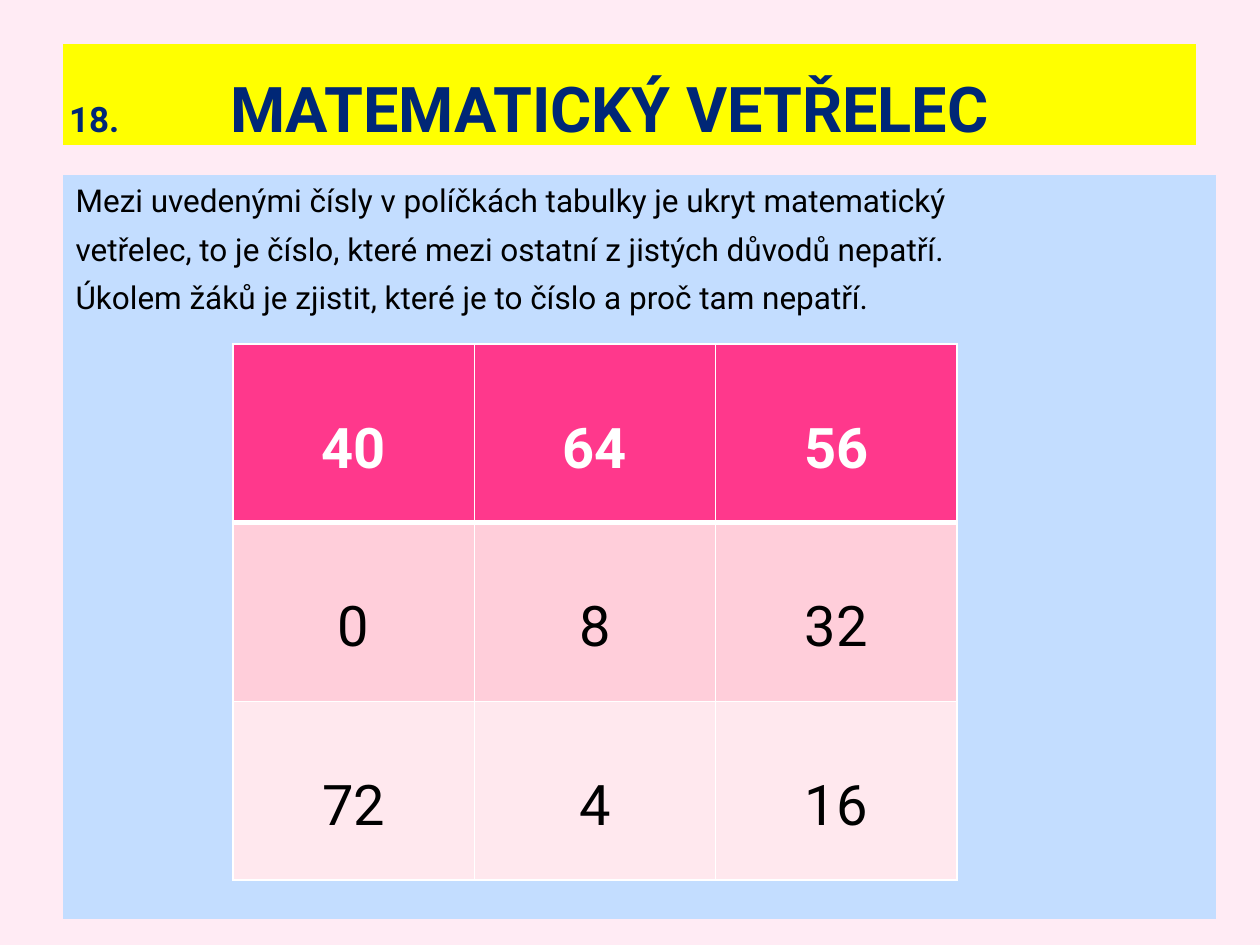
"""Build the slide with the odd-number-out puzzle."""
from dataclasses import dataclass

from lxml.etree import SubElement
from pptx import Presentation
from pptx.dml.color import RGBColor
from pptx.enum.text import MSO_ANCHOR, MSO_AUTO_SIZE, PP_ALIGN
from pptx.oxml.ns import qn
from pptx.util import Emu, Pt

BOTTOM, TOP = MSO_ANCHOR.BOTTOM, MSO_ANCHOR.TOP
LEFT, CENTER = PP_ALIGN.LEFT, PP_ALIGN.CENTER
NO_AUTOFIT = MSO_AUTO_SIZE.NONE
EMU_PER_PX = 914400 / 126


@dataclass(frozen=True)
class Theme:
    font: str = "Roboto"
    background: str = "FFEBF4"
    title_fill: str = "FFFF00"
    title_text: str = "002776"
    body_fill: str = "C3DDFF"
    text: str = "000000"
    white: str = "FFFFFF"
    number_size: int = 20
    title_size: int = 36
    body_size: int = 18
    cell_size: int = 32


@dataclass(frozen=True)
class Box:
    left: int
    top: int
    width: int
    height: int

    def emu(self) -> tuple:
        return px(self.left), px(self.top), px(self.width), px(self.height)


@dataclass(frozen=True)
class TableRow:
    numbers: tuple
    fill: str
    color: str
    bold: bool
    top_line: int
    bottom_line: int


THEME = Theme()
TITLE_BOX = Box(63, 44, 1133, 101)
BODY_BOX = Box(63, 175, 1153, 744)
TABLE_BOX = Box(233, 344, 724, 536)
TITLE_TAB = 161
BODY_INDENT = 38
CELL_TOP_MARGIN = 72
BODY_LINES = (
    "Mezi uvedenými čísly v políčkách tabulky je ukryt matematický",
    "vetřelec, to je číslo, které mezi ostatní z jistých důvodů nepatří.",
    "Úkolem žáků je zjistit, které je to číslo a proč tam nepatří.",
)
ROWS = (
    TableRow(("40", "64", "56"), "FF388C", THEME.white, True, 1, 3),
    TableRow(("0", "8", "32"), "FFCEDA", THEME.text, False, 3, 1),
    TableRow(("72", "4", "16"), "FFE8EE", THEME.text, False, 1, 1),
)


def px(n: int) -> Emu:
    """Turn pixels into EMU."""
    return Emu(round(n * EMU_PER_PX))


def paint(fill, color: str) -> None:
    """Give a fill one solid colour."""
    fill.solid()
    fill.fore_color.rgb = RGBColor.from_string(color)


def style_run(r, size: int, color: str, bold: bool = False) -> None:
    """Set the font of a run."""
    r.font.name = THEME.font
    r.font.size = Pt(size)
    r.font.bold = bold
    r.font.color.rgb = RGBColor.from_string(color)


def place(sp, box: Box, fill: str, anchor):
    """Move and fill a placeholder and return its text frame."""
    sp.left, sp.top, sp.width, sp.height = box.emu()
    paint(sp.fill, fill)
    tf = sp.text_frame
    tf.auto_size = NO_AUTOFIT
    tf.word_wrap = True
    tf.vertical_anchor = anchor
    return tf


def draw_title(sp) -> None:
    """Write the task number and the title, parted by a tab stop."""
    tf = place(sp, TITLE_BOX, THEME.title_fill, BOTTOM)
    tf.margin_left = tf.margin_right = px(6)
    tf.margin_top = tf.margin_bottom = 0
    p = tf.paragraphs[0]
    p.alignment = LEFT
    tabs = SubElement(p._p.get_or_add_pPr(), qn("a:tabLst"))
    SubElement(tabs, qn("a:tab"), pos=str(px(TITLE_TAB)), algn="l")
    parts = (("18.\t", THEME.number_size), ("MATEMATICKÝ VETŘELEC", THEME.title_size))
    for text, size in parts:
        r = p.add_run()
        r.text = text
        style_run(r, size, THEME.title_text, True)


def draw_body(sp) -> None:
    """Write the instructions."""
    tf = place(sp, BODY_BOX, THEME.body_fill, TOP)
    tf.text = "\n".join(BODY_LINES)
    for i, p in enumerate(tf.paragraphs):
        pPr = p._p.get_or_add_pPr()
        pPr.set("marL", str(px(BODY_INDENT)))
        pPr.set("indent", str(-px(BODY_INDENT)))
        SubElement(pPr, qn("a:buNone"))
        p.alignment = LEFT
        p.space_before = Pt(6 if i else 0)
        style_run(p.runs[0], THEME.body_size, THEME.text)


def add_borders(cell, row: TableRow) -> None:
    """Draw the four white borders of a cell."""
    tcPr = cell._tc.get_or_add_tcPr()
    widths = {"lnL": 1, "lnR": 1, "lnT": row.top_line, "lnB": row.bottom_line}
    for tag, width in widths.items():
        ln = SubElement(tcPr, qn(f"a:{tag}"), w=str(Pt(width)))
        fill = SubElement(ln, qn("a:solidFill"))
        SubElement(fill, qn("a:srgbClr"), val=THEME.white)


def draw_table(s) -> None:
    """Draw the grid of numbers."""
    table = s.shapes.add_table(len(ROWS), len(ROWS[0].numbers), *TABLE_BOX.emu()).table
    for i, row in enumerate(ROWS):
        for j, number in enumerate(row.numbers):
            cell = table.cell(i, j)
            add_borders(cell, row)
            paint(cell.fill, row.fill)
            cell.margin_top = px(CELL_TOP_MARGIN)
            cell.text_frame.text = number
            p = cell.text_frame.paragraphs[0]
            p.alignment = CENTER
            style_run(p.runs[0], THEME.cell_size, row.color, row.bold)


def main() -> None:
    """Build and save the slide."""
    prs = Presentation()
    prs.slide_width, prs.slide_height = px(1260), px(945)
    s = prs.slides.add_slide(prs.slide_layouts[1])
    paint(s.background.fill, THEME.background)
    draw_title(s.shapes.title)
    draw_body(s.placeholders[1])
    draw_table(s)
    prs.save("out.pptx")


if __name__ == "__main__":
    main()
